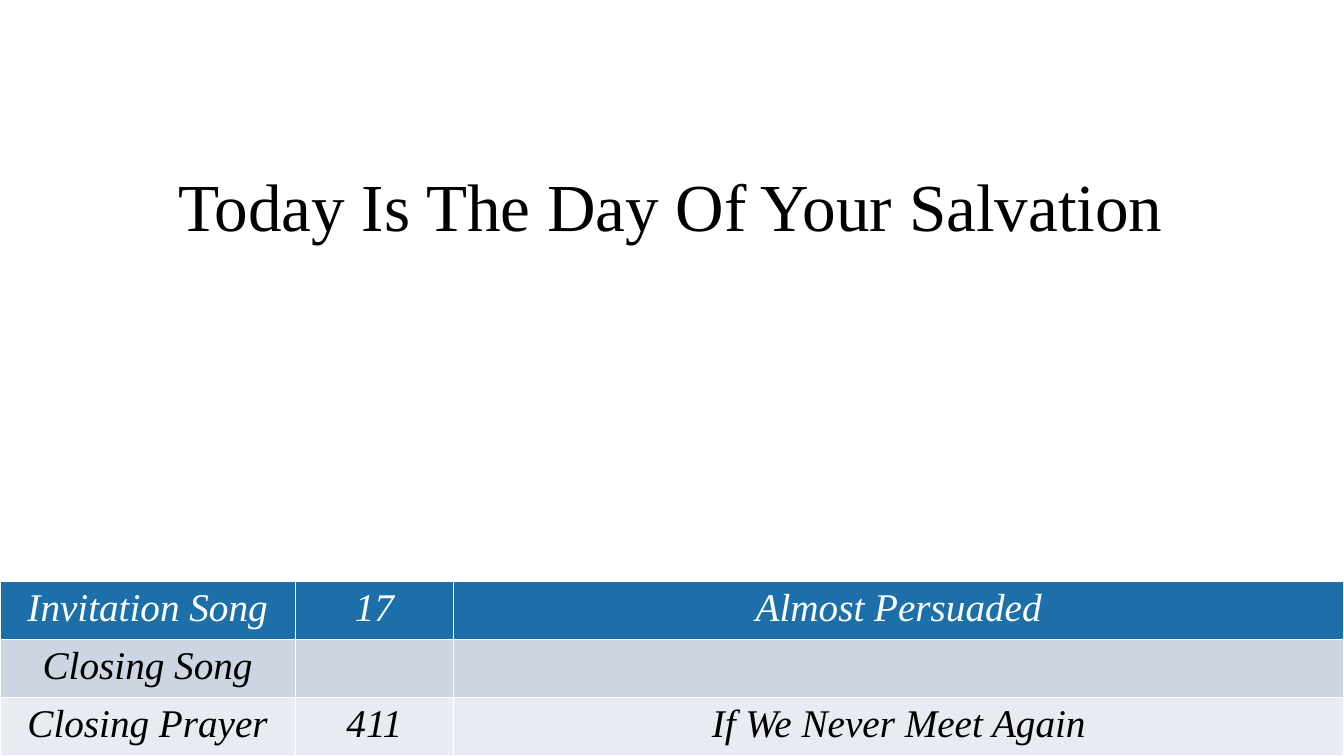
import pptx
import pptx.dml.color
import pptx.enum.text
import pptx.util

Cm = pptx.util.Cm
FONT = "Times New Roman"
SLIDE_WIDTH, SLIDE_HEIGHT = 33.87, 19.05
COLUMN_WIDTHS = (7.44, 3.99, 22.44)
SONGS = (
    ("Invitation Song", "17", "Almost Persuaded"),
    ("Closing Song", "", ""),
    ("Closing Prayer", "411", "If We Never Meet Again"),
)
ROW_COLOURS = (("1D6FA9", "FFFFFF"), ("CDD5E2", "000000"), ("E8EBF1", "000000"))


def colour(value):
    """Turn a hex string into a colour."""
    return pptx.dml.color.RGBColor.from_string(value)


def add_run(paragraph, text, size, text_colour, italic=False):
    """Add one formatted run to a paragraph."""
    run = paragraph.add_run()
    run.text = text
    run.font.name = FONT
    run.font.size = pptx.util.Pt(size)
    run.font.bold = False
    run.font.italic = italic
    run.font.color.rgb = colour(text_colour)


def place_title(slide, text, left, top, width, height):
    """Move the title placeholder into its box and write the title."""
    title = slide.shapes.title
    title.left, title.top, title.width, title.height = map(Cm, (left, top, width, height))
    frame = title.text_frame
    frame.word_wrap = False
    frame.auto_size = pptx.enum.text.MSO_AUTO_SIZE.SHAPE_TO_FIT_TEXT
    frame.vertical_anchor = pptx.enum.text.MSO_ANCHOR.TOP
    paragraph = frame.paragraphs[0]
    paragraph.alignment = pptx.enum.text.PP_ALIGN.LEFT
    add_run(paragraph, text, 48, "000000")


def add_song_table(slide, left, top, width, height):
    """Add the table of songs with one colour pair per row."""
    table = slide.shapes.add_table(
        len(SONGS), len(COLUMN_WIDTHS), Cm(left), Cm(top), Cm(width), Cm(height)
    ).table
    for column, share in zip(table.columns, COLUMN_WIDTHS):
        column.width = Cm(width * share / sum(COLUMN_WIDTHS))
    for row, texts, (fill_colour, text_colour) in zip(table.rows, SONGS, ROW_COLOURS):
        row.height = Cm(height / len(SONGS))
        for cell, text in zip(row.cells, texts):
            cell.fill.solid()
            cell.fill.fore_color.rgb = colour(fill_colour)
            paragraph = cell.text_frame.paragraphs[0]
            paragraph.alignment = pptx.enum.text.PP_ALIGN.CENTER
            if text:
                add_run(paragraph, text, 28, text_colour, italic=True)


def main():
    """Build and save the presentation."""
    presentation = pptx.Presentation()
    presentation.slide_width = Cm(SLIDE_WIDTH)
    presentation.slide_height = Cm(SLIDE_HEIGHT)
    slide = presentation.slides.add_slide(presentation.slide_layouts.get_by_name("Title Only"))
    place_title(slide, "Today Is The Day Of Your Salvation", 4.24, 4.01, 25.58, 2.31)
    table_height = 4.39
    add_song_table(slide, 0, SLIDE_HEIGHT - table_height, SLIDE_WIDTH, table_height)
    presentation.save("out.pptx")


if __name__ == "__main__":
    main()
